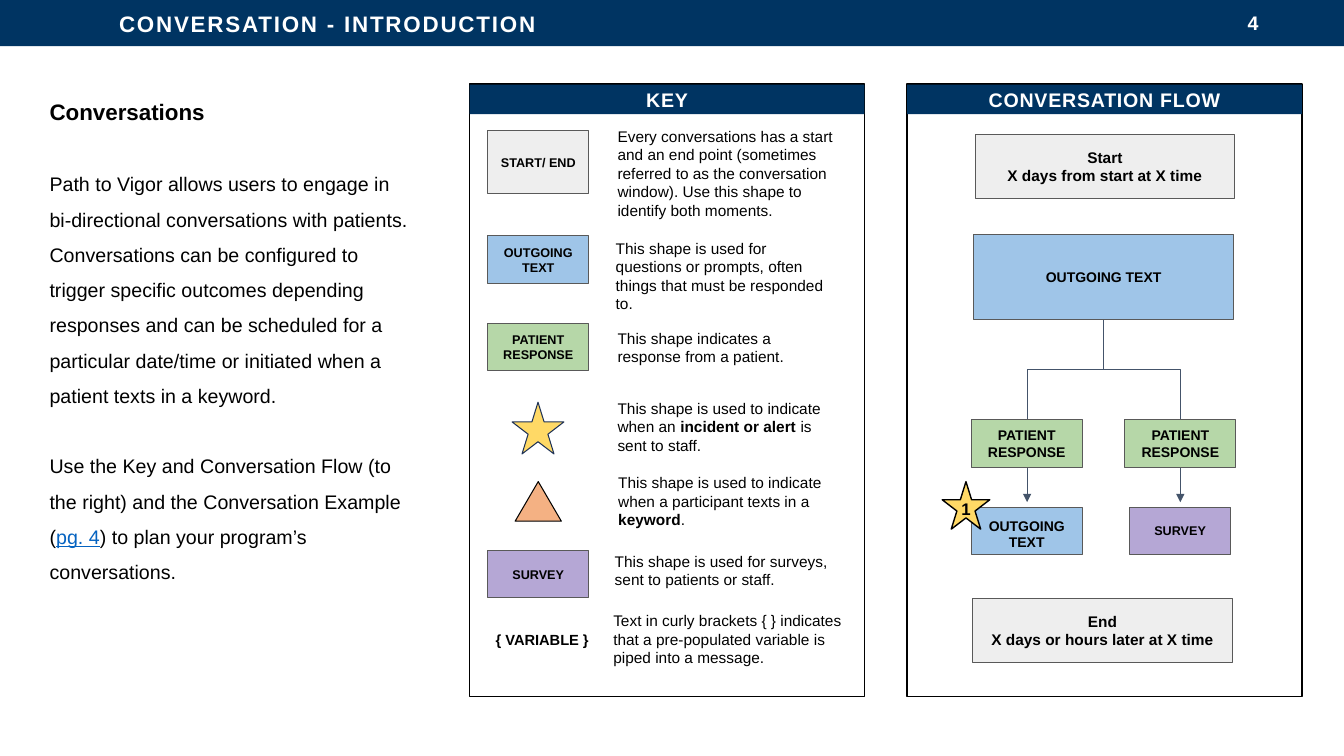
from lxml import etree
from pptx import Presentation
from pptx.dml.color import RGBColor
from pptx.enum.shapes import MSO_CONNECTOR, MSO_SHAPE
from pptx.enum.text import MSO_ANCHOR, MSO_AUTO_SIZE, PP_ALIGN
from pptx.oxml.ns import qn
from pptx.util import Pt

RECT, STAR, TRIANGLE = MSO_SHAPE.RECTANGLE, MSO_SHAPE.STAR_5_POINT, MSO_SHAPE.ISOSCELES_TRIANGLE
STRAIGHT, ELBOW = MSO_CONNECTOR.STRAIGHT, MSO_CONNECTOR.ELBOW
TOP, MIDDLE = MSO_ANCHOR.TOP, MSO_ANCHOR.MIDDLE
LEFT, CENTER, RIGHT = PP_ALIGN.LEFT, PP_ALIGN.CENTER, PP_ALIGN.RIGHT

NAVY, WHITE, BLACK = "003462", "FFFFFF", "000000"
GRAY, BLUE, GREEN = "EEEEEE", "9FC5E8", "B6D7A8"
PURPLE, YELLOW, ORANGE = "B5A7D5", "FFD966", "F4B183"
OUTLINE, ARROW, LINK = "595959", "44546A", "0563C1"
color = RGBColor.from_string


def add_spans(para, spans, size, hue=BLACK, spacing=0):
    """Add (text, bold) runs; spacing is the letter spacing in points."""
    for text, bold in spans:
        span = para.add_run()
        span.text = text
        span.font.name = "Arial"
        span.font.size = Pt(size)
        span.font.bold = bold
        span.font.color.rgb = color(hue)
        if spacing:
            span.font._element.set("spc", str(int(spacing * 100)))


def add_box(kind, place, fill=None, line=OUTLINE, weight=0.75, lines=(), size=10,
            hue=BLACK, spacing=0, anchor=MIDDLE, inset=7.2):
    """Add a shape with bold centred lines; a fill or line of None is left out."""
    box = page.shapes.add_shape(kind, *map(Pt, place))
    box.shadow.inherit = False
    if fill:
        box.fill.solid()
        box.fill.fore_color.rgb = color(fill)
    else:
        box.fill.background()
    if line:
        box.line.color.rgb = color(line)
        box.line.width = Pt(weight)
    else:
        box.line.fill.background()
    frame = box.text_frame
    frame.word_wrap = True
    frame.vertical_anchor = anchor
    frame.margin_left = frame.margin_right = Pt(inset)
    frame.margin_top = frame.margin_bottom = Pt(inset if anchor == TOP else 0)
    for index, text in enumerate(lines):
        para = frame.add_paragraph() if index else frame.paragraphs[0]
        para.alignment = CENTER
        add_spans(para, [(text, True)], size, hue, spacing)


deck = Presentation()
deck.slide_width, deck.slide_height = Pt(960), Pt(540)
page = deck.slides.add_slide(deck.slide_layouts[1])

# Title band and page number
title = page.shapes.title
title.left, title.top, title.width, title.height = Pt(0), Pt(0), Pt(960), Pt(33)
title.fill.solid()
title.fill.fore_color.rgb = color(NAVY)
frame = title.text_frame
frame.auto_size = MSO_AUTO_SIZE.NONE
frame.vertical_anchor = MIDDLE
frame.margin_left = Pt(85)
frame.margin_top = frame.margin_bottom = Pt(0)
frame.paragraphs[0].alignment = LEFT
add_spans(frame.paragraphs[0], [("CONVERSATION - INTRODUCTION", True)], 16, WHITE, 1.3)

number = page.shapes.add_textbox(Pt(690), Pt(1.5), Pt(216), Pt(29))
number.text_frame.vertical_anchor = MIDDLE
number.text_frame.word_wrap = True
number.text_frame.paragraphs[0].alignment = RIGHT
add_spans(number.text_frame.paragraphs[0], [("4", True)], 14, WHITE)

# Introduction
body = page.placeholders[1]
body.left, body.top, body.width, body.height = Pt(28.2), Pt(57), Pt(276.5), Pt(365)
body.text_frame.auto_size = MSO_AUTO_SIZE.NONE
introduction = [
    (16, [("Conversations", True, BLACK)]),
    (14, [("Path to Vigor allows users to engage in bi-directional conversations with "
           "patients. Conversations can be configured to trigger specific outcomes "
           "depending responses and can be scheduled for a particular date/time or "
           "initiated when a patient texts in a keyword.", False, BLACK)]),
    (14, [("Use the Key and Conversation Flow (to the right) and the Conversation "
           "Example (", False, BLACK),
          ("pg. 4", False, LINK),
          (") to plan your program’s conversations.", False, BLACK)]),
]
for index, (size, spans) in enumerate(introduction):
    para = body.text_frame.add_paragraph() if index else body.text_frame.paragraphs[0]
    para.line_spacing = 1.5
    para.space_before = Pt(25.2 if index else 0)
    properties = para._p.get_or_add_pPr()
    properties.set("marL", "0")
    properties.set("indent", "0")
    etree.SubElement(properties, qn("a:buNone"))
    for text, bold, hue in spans:
        add_spans(para, [(text, bold)], size, hue)
        para.runs[-1].font.underline = hue == LINK

# Panels
for left, heading in [(335.5, "KEY"), (648, "CONVERSATION FLOW")]:
    add_box(RECT, (left, 60, 282, 437.5), line=BLACK, weight=1)
    add_box(RECT, (left, 60.5, 282, 21), NAVY, None, lines=[heading],
            size=14, hue=WHITE, spacing=0.5)

# Key: symbols
for top, height, fill, label in [(93, 45.5, GRAY, "START/ END"),
                                 (168.5, 34, BLUE, "OUTGOING TEXT"),
                                 (231, 34, GREEN, "PATIENT RESPONSE"),
                                 (393, 34, PURPLE, "SURVEY")]:
    add_box(RECT, (348.5, top, 72, height), fill, lines=[label], size=9)
add_box(STAR, (365.8, 287.3, 37, 37), YELLOW, "1E3256")
add_box(TRIANGLE, (368, 344, 33, 28.3), ORANGE, BLACK)

# Key: variable label and explanations
key_texts = [
    (347, 447, 84, 10.5, [("{ VARIABLE }", True)]),
    (434, 87, 170, 11, [("Every conversations has a start and an end point (sometimes referred "
                         "to as the conversation window). Use this shape to identify both "
                         "moments.", False)]),
    (432.7, 167, 170, 11, [("This shape is used for questions or prompts, often things that "
                            "must be responded to.", False)]),
    (434, 231.5, 170, 11, [("This shape indicates a response from a patient.", False)]),
    (434, 281.5, 170, 11, [("This shape is used to indicate when an ", False),
                           ("incident or alert ", True), ("is sent to staff.", False)]),
    (434.5, 334.5, 170, 11, [("This shape is used to indicate when a participant texts in a ",
                              False), ("keyword", True), (".", False)]),
    (432, 390.5, 170, 11, [("This shape is used for surveys, sent to patients or staff.",
                            False)]),
    (431, 433, 180, 11, [("Text in curly brackets { } indicates that a pre-populated variable "
                          "is piped into a message.", False)]),
]
for left, top, width, size, spans in key_texts:
    box = page.shapes.add_textbox(Pt(left), Pt(top), Pt(width), Pt(20))
    box.text_frame.word_wrap = True
    box.text_frame.auto_size = MSO_AUTO_SIZE.SHAPE_TO_FIT_TEXT
    add_spans(box.text_frame.paragraphs[0], spans, size)

# Flow: connectors
trunk, reach = 788.4, 54.7
fork_top, fork_bottom = 228, 300
run = fork_bottom - fork_top
connectors = []
for side, turn in [(-1, 90), (1, 270)]:
    branch = trunk + side * reach
    middle_x, middle_y = (trunk + branch) / 2, (fork_top + fork_bottom) / 2
    fork = page.shapes.add_connector(
        ELBOW, Pt(middle_x + side * run / 2), Pt(middle_y - reach / 2),
        Pt(middle_x - side * run / 2), Pt(middle_y + reach / 2))
    fork._element.spPr.find(qn("a:xfrm")).set("rot", str(turn * 60000))
    arrow = page.shapes.add_connector(STRAIGHT, Pt(branch), Pt(333.7), Pt(branch), Pt(358.7))
    connectors += [(fork, False), (arrow, True)]
for connector, has_head in connectors:
    connector.line.color.rgb = color(ARROW)
    connector.line.width = Pt(0.75)
    if has_head:
        etree.SubElement(connector.line._get_or_add_ln(), qn("a:tailEnd"), type="triangle")
    etree.SubElement(connector._element.spPr, qn("a:effectLst"))

# Flow: steps
add_box(RECT, (696.5, 96, 185.5, 45.5), GRAY,
        lines=["Start", "X days from start at X time"], size=11)
add_box(RECT, (695.3, 167.5, 186, 60.7), BLUE, lines=["OUTGOING TEXT"])
for left in (693.8, 803.5):
    add_box(RECT, (left, 300, 79.2, 33.8), GREEN, lines=["PATIENT RESPONSE"])
add_box(RECT, (693.8, 362.2, 79.2, 33.8), BLUE, lines=["OUTGOING TEXT"], anchor=TOP)
add_box(RECT, (807, 362.2, 72, 33.8), PURPLE, lines=["SURVEY"], size=9)
add_box(RECT, (694.6, 427.5, 186, 45.5), GRAY,
        lines=["End", "X days or hours later at X time"], size=11)
add_box(STAR, (673, 344, 34, 34), YELLOW, BLACK, 1, ["1"], 12, inset=0)

deck.save("out.pptx")
